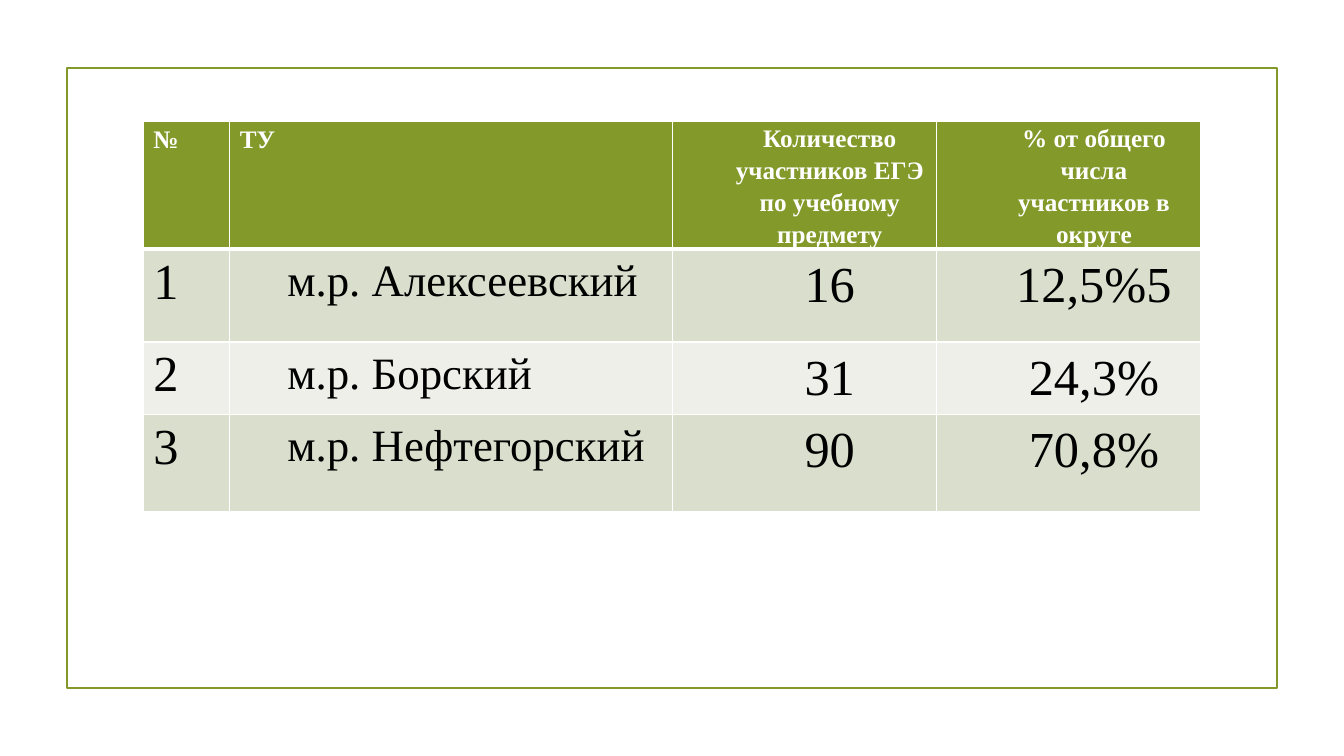
from lxml import etree
from pptx import Presentation
from pptx import util as u
from pptx.dml.color import RGBColor
from pptx.enum import shapes, text
from pptx.oxml import ns

GREEN = RGBColor(0x83, 0x99, 0x2A)
WHITE = RGBColor(0xFF, 0xFF, 0xFF)
BLACK = RGBColor(0, 0, 0)
BAND_DARK = RGBColor(0xD9, 0xDE, 0xCD)
BAND_LIGHT = RGBColor(0xED, 0xEF, 0xE8)
FONT = "Times New Roman"

WIDTH, HEIGHT = u.Inches(13.33), u.Inches(7.5)
COLUMNS = [0.86, 4.39, 2.62, 2.62]
ROWS = [1.26, 0.92, 0.72, 0.96]
DISTRICTS = [
    ["№", "ТУ", "Количество участников ЕГЭ по учебному предмету",
     "% от общего числа участников в округе"],
    ["1", "м.р. Алексеевский", "16", "12,5%5"],
    ["2", "м.р. Борский", "31", "24,3%"],
    ["3", "м.р. Нефтегорский", "90", "70,8%"],
]


def add_frame(page):
    box = page.shapes.add_shape(
        shapes.MSO_SHAPE.RECTANGLE, int(WIDTH * 0.05), int(HEIGHT * 0.09),
        int(WIDTH * 0.9), int(HEIGHT * 0.82))
    box.shadow.inherit = False
    box.fill.background()
    box.line.color.rgb = GREEN
    box.line.width = u.Pt(1.25)


def set_borders(cell, color, bottom):
    """Draw 1 pt cell borders, with a bottom border of its own width."""
    properties = cell._tc.get_or_add_tcPr()
    for place, side in enumerate("LRTB"):
        line = etree.Element(ns.qn(f"a:ln{side}"))
        line.set("w", str(u.Pt(bottom if side == "B" else 1)))
        fill = etree.SubElement(line, ns.qn("a:solidFill"))
        etree.SubElement(fill, ns.qn("a:srgbClr")).set("val", str(color))
        properties.insert(place, line)


def write_cell(cell, words, size=36, color=BLACK, bold=False, align=None,
               indented=False):
    para = cell.text_frame.paragraphs[0]
    if indented:
        cell.margin_left = cell.margin_right = u.Inches(0.07)
        cell.margin_top = cell.margin_bottom = 0
        para.line_spacing = 1.15
        para._p.get_or_add_pPr().set("marL", str(u.Inches(0.5)))
        para._p.get_or_add_pPr().set("indent", "0")
    para.alignment = align
    span = para.add_run()
    span.text = words
    span.font.name = FONT
    span.font.size = u.Pt(size)
    span.font.bold = bold
    span.font.color.rgb = color


def add_districts(page):
    table = page.shapes.add_table(
        len(ROWS), len(COLUMNS), u.Inches(1.42), u.Inches(1.2),
        u.Inches(sum(COLUMNS)), u.Inches(sum(ROWS))).table
    for column, width in zip(table.columns, COLUMNS):
        column.width = u.Inches(width)
    for row, height in zip(table.rows, ROWS):
        row.height = u.Inches(height)

    aligns = [text.PP_ALIGN.LEFT, text.PP_ALIGN.JUSTIFY,
              text.PP_ALIGN.CENTER, text.PP_ALIGN.CENTER]
    for r, record in enumerate(DISTRICTS):
        header = r == 0
        band = GREEN if header else BAND_DARK if r % 2 else BAND_LIGHT
        for c, words in enumerate(record):
            cell = table.cell(r, c)
            cell.fill.solid()
            cell.fill.fore_color.rgb = band
            set_borders(cell, WHITE, bottom=3 if header else 1)
            write_cell(
                cell, words,
                size=18 if header else 32 if c == 1 else 36,
                color=WHITE if header else BLACK, bold=header,
                align=text.PP_ALIGN.LEFT if header and c < 2 else aligns[c],
                indented=c > 1 or (c == 1 and not header))


def main():
    deck = Presentation()
    deck.slide_width, deck.slide_height = WIDTH, HEIGHT
    page = deck.slides.add_slide(deck.slide_layouts[6])
    page.background.fill.solid()
    page.background.fill.fore_color.rgb = WHITE
    add_frame(page)
    add_districts(page)
    deck.save("out.pptx")


if __name__ == "__main__":
    main()
